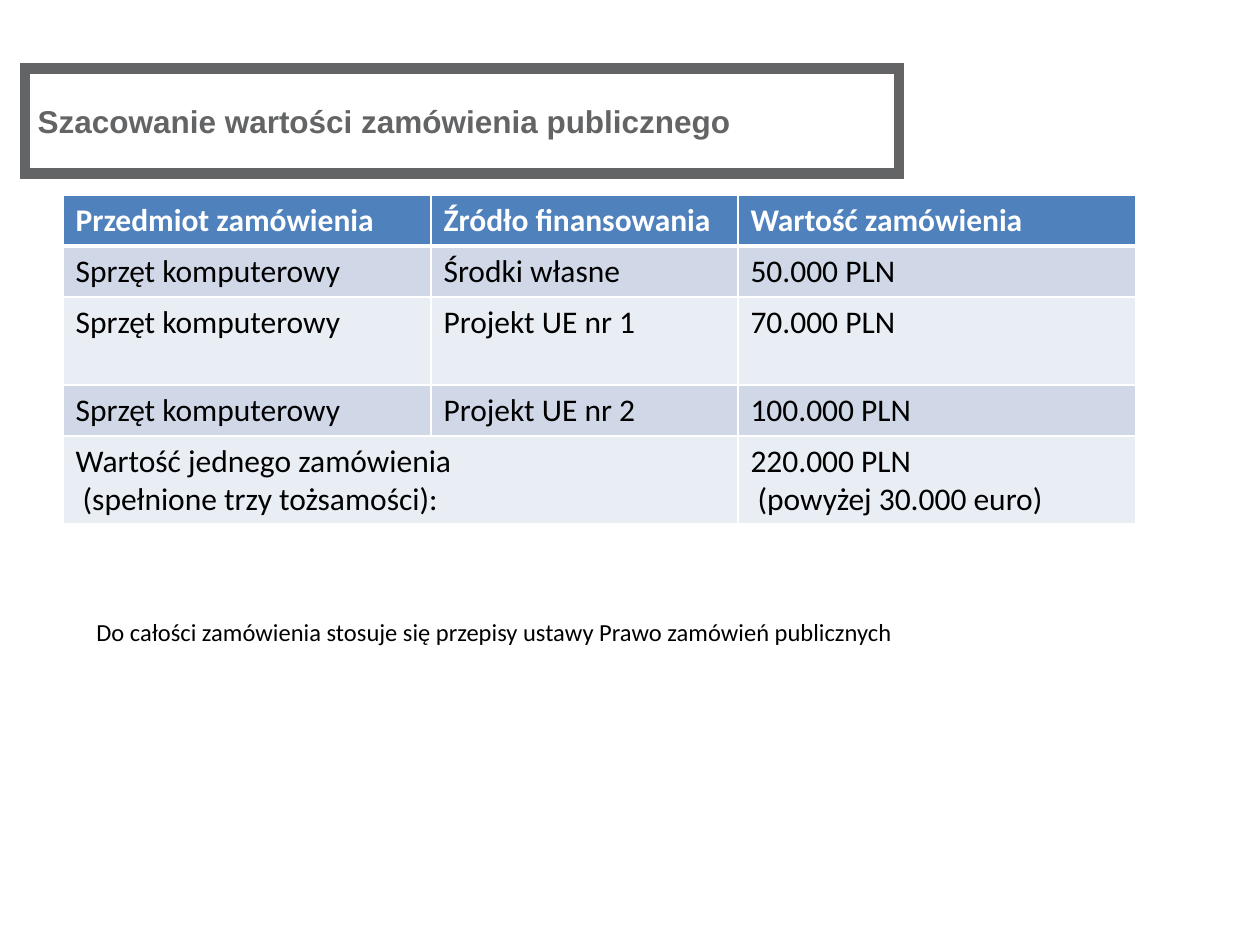
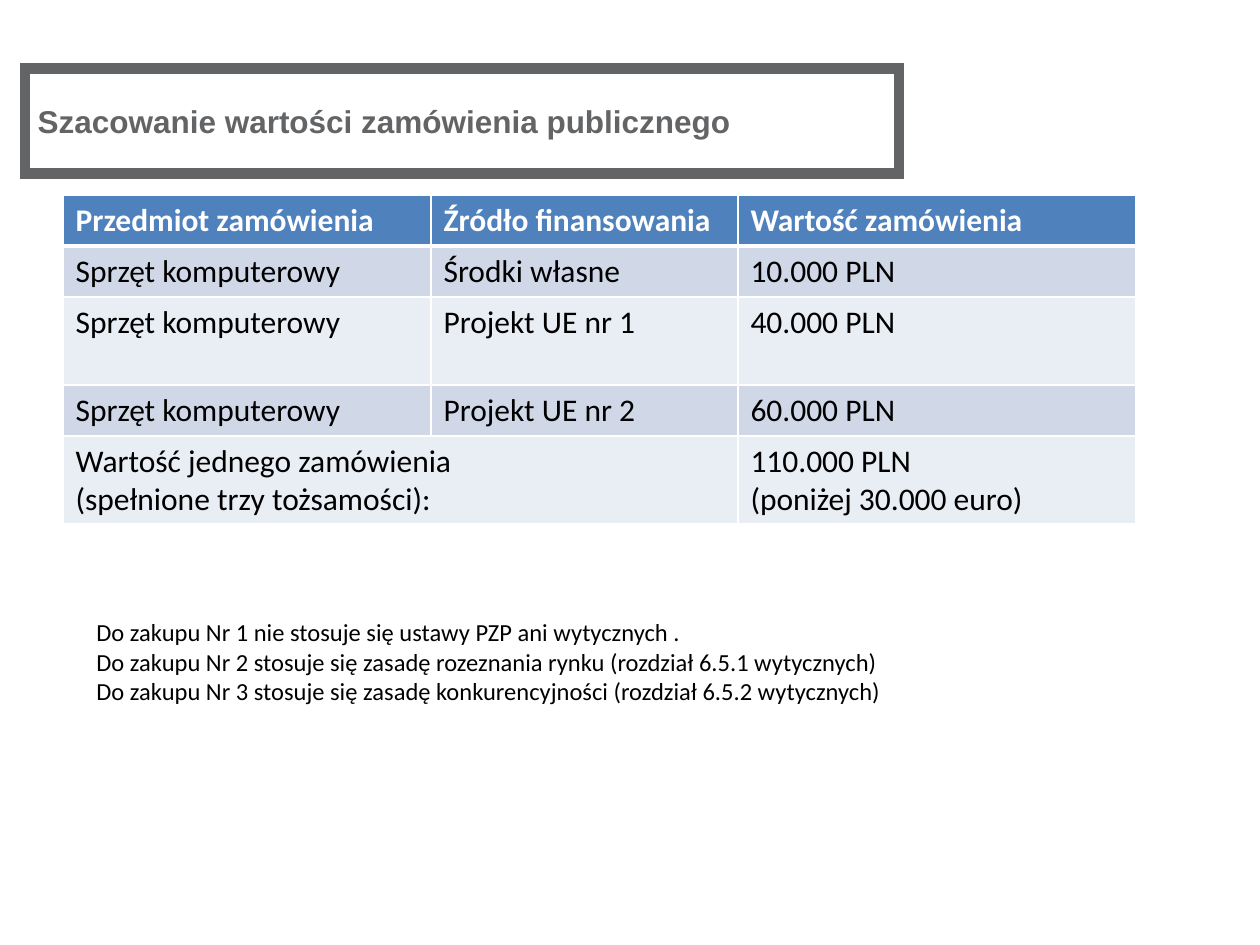
"""Builds two slides on estimating the value of a public procurement."""
from dataclasses import dataclass

from lxml import etree
from pptx import Presentation
from pptx.dml.color import RGBColor
from pptx.enum.text import MSO_ANCHOR, MSO_AUTO_SIZE, PP_ALIGN
from pptx.oxml.ns import qn
from pptx.util import Emu, Pt

LEFT, TOP = PP_ALIGN.LEFT, MSO_ANCHOR.TOP
MIDDLE = MSO_ANCHOR.MIDDLE
FIT_SHAPE = MSO_AUTO_SIZE.SHAPE_TO_FIT_TEXT

PX_PER_INCH = 126
SLIDE_SIZE = (1260, 945)
TITLE_ONLY = 5

GREY = RGBColor(0x63, 0x64, 0x66)
WHITE = RGBColor(0xFF, 0xFF, 0xFF)
BLACK = RGBColor(0x00, 0x00, 0x00)
HEADER_BLUE = RGBColor(0x4F, 0x81, 0xBD)
BANDS = (RGBColor(0xE9, 0xED, 0xF4), RGBColor(0xD0, 0xD8, 0xE8))

TITLE = "Szacowanie wartości zamówienia publicznego"
HEADINGS = ("Przedmiot zamówienia", "Źródło finansowania", "Wartość zamówienia")
SUBJECT = "Sprzęt komputerowy"
SOURCES = ("Środki własne", "Projekt UE nr 1", "Projekt UE nr 2")
COLUMN_WIDTHS = (368, 307, 398)
ROW_HEIGHTS = (51, 51, 88, 51, 88)


@dataclass(frozen=True)
class Box:
    left: int
    top: int
    width: int
    height: int

    def emu(self) -> tuple[Emu, ...]:
        return tuple(px(n) for n in (self.left, self.top, self.width, self.height))


@dataclass(frozen=True)
class Style:
    font: str
    size: int
    color: RGBColor
    bold: bool = False


@dataclass(frozen=True)
class Estimate:
    values: tuple[str, ...]
    total_label: str
    total: str
    rules: tuple[str, ...]
    rules_height: int


TITLE_BOX = Box(25, 96, 874, 50)
TABLE_BOX = Box(63, 195, sum(COLUMN_WIDTHS), sum(ROW_HEIGHTS))
TITLE_STYLE = Style("Arial", 18, GREY, True)
HEADER_STYLE = Style("Calibri", 18, WHITE, True)
BODY_STYLE = Style("Calibri", 18, BLACK)
RULES_STYLE = Style("Calibri", 14, BLACK)

ESTIMATES = (
    Estimate(
        ("50.000 PLN", "70.000 PLN", "100.000 PLN"),
        "Wartość jednego zamówienia\n (spełnione trzy tożsamości):",
        "220.000 PLN\n (powyżej 30.000 euro)",
        ("Do całości zamówienia stosuje się przepisy ustawy Prawo zamówień publicznych",),
        43,
    ),
    Estimate(
        ("10.000 PLN", "40.000 PLN", "60.000 PLN"),
        "Wartość jednego zamówienia\n(spełnione trzy tożsamości):",
        "110.000 PLN\n(poniżej 30.000 euro)",
        (
            "Do zakupu Nr 1 nie stosuje się ustawy PZP ani wytycznych .",
            "Do zakupu Nr 2 stosuje się zasadę rozeznania rynku (rozdział 6.5.1 wytycznych)",
            "Do zakupu Nr 3 stosuje się zasadę konkurencyjności (rozdział 6.5.2 wytycznych)",
        ),
        102,
    ),
)


def px(length: int) -> Emu:
    return Emu(round(length * 914400 / PX_PER_INCH))


def write(frame, text: str, style: Style) -> None:
    frame.text = text
    for paragraph in frame.paragraphs:
        paragraph.alignment = LEFT
        paragraph.font.name = style.font
        paragraph.font.size = Pt(style.size)
        paragraph.font.bold = style.bold
        paragraph.font.color.rgb = style.color


def add_title(slide) -> None:
    title = slide.shapes.title
    title.left, title.top, title.width, title.height = TITLE_BOX.emu()
    title.line.color.rgb = GREY
    title.line.width = Pt(6)
    outline = title.element.spPr.find(qn("a:ln"))
    etree.SubElement(outline, qn("a:miter"), lim="800000")
    write(title.text_frame, TITLE, TITLE_STYLE)
    title.text_frame.vertical_anchor = MIDDLE
    title.text_frame.word_wrap = True
    title.text_frame.auto_size = FIT_SHAPE


def add_rules(slide, estimate: Estimate) -> None:
    box = Box(84, 611, 1095, estimate.rules_height)
    frame = slide.shapes.add_textbox(*box.emu()).text_frame
    frame.word_wrap = True
    frame.auto_size = FIT_SHAPE
    write(frame, "\n".join(estimate.rules), RULES_STYLE)


def set_borders(cell, top: int, bottom: int) -> None:
    properties = cell._tc.get_or_add_tcPr()
    for side, width in (("L", 1), ("R", 1), ("T", top), ("B", bottom)):
        line = etree.SubElement(properties, qn(f"a:ln{side}"), w=str(int(Pt(width))))
        fill = etree.SubElement(line, qn("a:solidFill"))
        etree.SubElement(fill, qn("a:srgbClr"), val=str(WHITE))


def add_table(slide, estimate: Estimate) -> None:
    purchases = [(SUBJECT, *pair) for pair in zip(SOURCES, estimate.values)]
    rows = [HEADINGS, *purchases, (estimate.total_label, "", estimate.total)]
    table = slide.shapes.add_table(len(rows), len(HEADINGS), *TABLE_BOX.emu()).table
    for column, width in zip(table.columns, COLUMN_WIDTHS):
        column.width = px(width)
    for row, height in zip(table.rows, ROW_HEIGHTS):
        row.height = px(height)
    last = len(rows) - 1
    table.cell(last, 0).merge(table.cell(last, 1))
    for r, texts in enumerate(rows):
        for c, text in enumerate(texts):
            cell = table.cell(r, c)
            if not cell.is_spanned:
                set_borders(cell, 3 if r == 1 else 1, 3 if r == 0 else 1)
                write(cell.text_frame, text, BODY_STYLE if r else HEADER_STYLE)
                cell.vertical_anchor = TOP
            cell.fill.solid()
            cell.fill.fore_color.rgb = BANDS[r % 2] if r else HEADER_BLUE


def main() -> None:
    deck = Presentation()
    deck.slide_width, deck.slide_height = map(px, SLIDE_SIZE)
    for estimate in ESTIMATES:
        slide = deck.slides.add_slide(deck.slide_layouts[TITLE_ONLY])
        add_title(slide)
        add_rules(slide, estimate)
        add_table(slide, estimate)
    deck.save("out.pptx")


if __name__ == "__main__":
    main()
